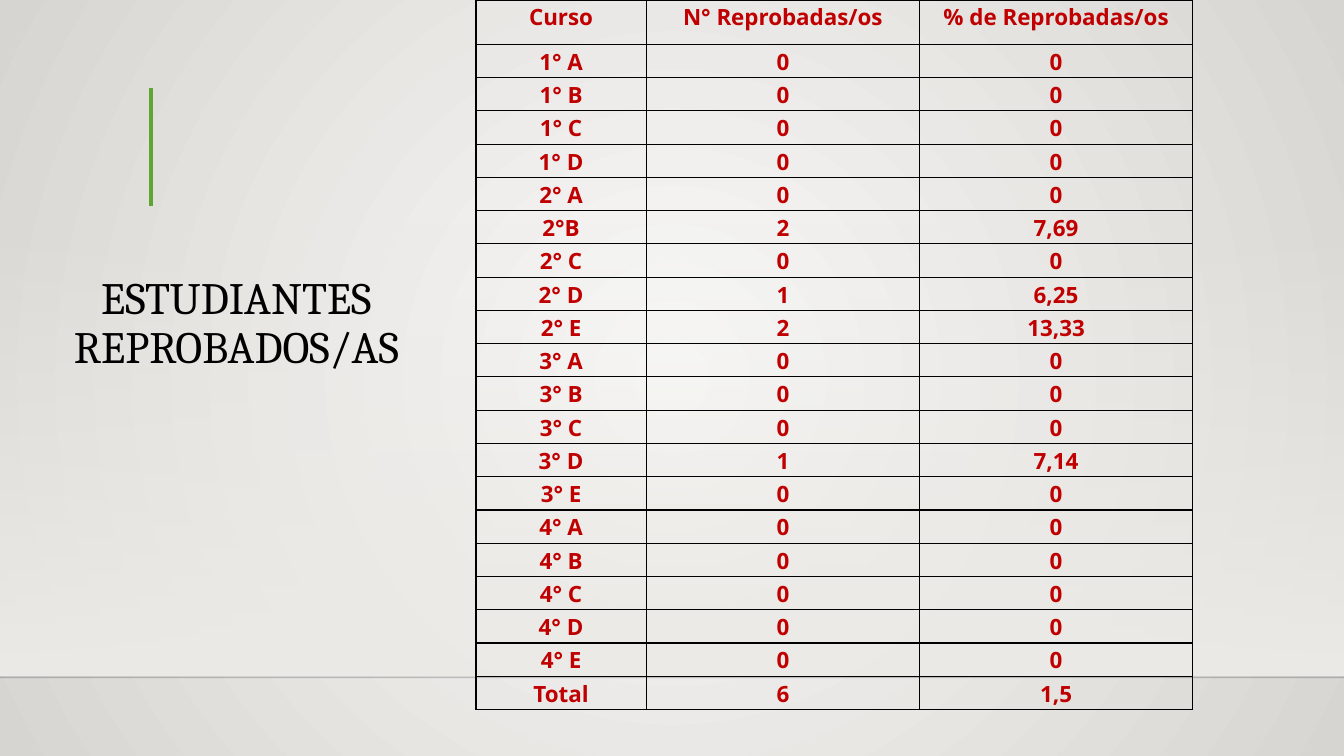
from lxml.etree import SubElement
from pptx import Presentation
from pptx.dml.color import RGBColor
from pptx.enum.shapes import MSO_CONNECTOR, MSO_SHAPE
from pptx.enum.text import MSO_ANCHOR, PP_ALIGN
from pptx.oxml import parse_xml
from pptx.oxml.ns import nsdecls, qn
from pptx.util import Inches, Pt

COLORS = {
    "center": "FAFAF9",
    "edge": "D7D5D2",
    "band": "EDEBE7",
    "floor": "000001",
    "accent": "5FA534",
    "black": "000000",
    "red": "C00000",
}

HEADERS = ("Curso", "N° Reprobadas/os", "% de Reprobadas/os")
COURSES = ("1° A", "1° B", "1° C", "1° D", "2° A", "2°B", "2° C", "2° D", "2° E",
           "3° A", "3° B", "3° C", "3° D", "3° E",
           "4° A", "4° B", "4° C", "4° D", "4° E")
FAILED = {"2°B": ("2", "7,69"), "2° D": ("1", "6,25"),
          "2° E": ("2", "13,33"), "3° D": ("1", "7,14")}
TOTAL = ("Total", "6", "1,5")


def rgb(name):
    return RGBColor.from_string(COLORS[name])


def set_gradient(owner, stops, direction):
    """Replace the solid fill of owner by a gradient of (position, color, alpha) stops."""
    gs = "".join(
        f'<a:gs pos="{pos * 1000}"><a:srgbClr val="{COLORS[color]}">'
        f'<a:alpha val="{alpha * 1000}"/></a:srgbClr></a:gs>'
        for pos, color, alpha in stops)
    solid = owner.find(qn("a:solidFill"))
    owner.replace(solid, parse_xml(
        f'<a:gradFill {nsdecls("a")} rotWithShape="1"><a:gsLst>{gs}</a:gsLst>'
        f'{direction}</a:gradFill>'))


def add_line(s, x1, y1, x2, y2, color, width):
    line = s.shapes.add_connector(MSO_CONNECTOR.STRAIGHT, Inches(x1), Inches(y1),
                                  Inches(x2), Inches(y2))
    line.line.color.rgb = rgb(color)
    line.line.width = Pt(width)
    SubElement(line._element.spPr, qn("a:effectLst"))
    return line


def add_backdrop(s, width):
    fill = s.background.fill
    fill.solid()
    fill.fore_color.rgb = rgb("center")
    set_gradient(s._element.cSld.find(qn("p:bg")).find(qn("p:bgPr")),
                 [(0, "center", 100), (100, "edge", 100)],
                 '<a:path path="circle"><a:fillToRect l="50000" t="50000" '
                 'r="50000" b="50000"/></a:path>')

    band = s.shapes.add_shape(MSO_SHAPE.RECTANGLE, 0, Inches(2.2),
                              Inches(width), Inches(4.5))
    band.shadow.inherit = False
    band.line.fill.background()
    band.fill.solid()
    set_gradient(band._element.spPr, [(0, "band", 0), (100, "band", 100)],
                 '<a:lin ang="5400000" scaled="0"/>')

    floor = add_line(s, 0, 6.72, width, 6.72, "floor", 1)
    floor_color = floor._element.spPr.find(".//" + qn("a:srgbClr"))
    SubElement(floor_color, qn("a:alpha"), val="20000")
    add_line(s, 1.5, 0.87, 1.5, 2.04, "accent", 3)


def add_title(s, x, y, w, h):
    tf = s.shapes.add_textbox(Inches(x), Inches(y), Inches(w), Inches(h)).text_frame
    tf.word_wrap = True
    tf.vertical_anchor = MSO_ANCHOR.BOTTOM
    p = tf.paragraphs[0]
    p.text = "ESTUDIANTES REPROBADOS/AS"
    p.alignment = PP_ALIGN.CENTER
    p.line_spacing = 0.9
    p.font.name = "Cambria"
    p.font.size = Pt(32)
    p.font.color.rgb = rgb("black")


def style_cell(cell, text):
    cell.margin_left = cell.margin_right = Inches(0.07)
    cell.margin_top = cell.margin_bottom = 0
    tc_pr = cell._tc.get_or_add_tcPr()
    for side in ("lnL", "lnR", "lnT", "lnB"):
        tc_pr.append(parse_xml(
            f'<a:{side} {nsdecls("a")} w="{Pt(1)}"><a:solidFill>'
            f'<a:srgbClr val="{COLORS["black"]}"/></a:solidFill></a:{side}>'))
    cell.fill.background()
    p = cell.text_frame.paragraphs[0]
    p.text = text
    p.alignment = PP_ALIGN.CENTER
    p.line_spacing = 1.07
    p.space_after = Pt(8)
    p.font.name = "Open Sans"
    p.font.size = Pt(16)
    p.font.bold = True
    p.font.color.rgb = rgb("red")


def add_results_table(s, x, y, col_widths, header_height, row_height):
    rows = [HEADERS, *((c, *FAILED.get(c, ("0", "0"))) for c in COURSES), TOTAL]
    height = header_height + row_height * (len(rows) - 1)
    table = s.shapes.add_table(len(rows), len(col_widths), Inches(x), Inches(y),
                               Inches(sum(col_widths)), Inches(height)).table
    table.first_row = table.horz_banding = False
    for column, width in zip(table.columns, col_widths):
        column.width = Inches(width)
    for i, (row, values) in enumerate(zip(table.rows, rows)):
        row.height = Inches(row_height if i else header_height)
        for cell, text in zip(row.cells, values):
            style_cell(cell, text)


def main():
    prs = Presentation()
    prs.slide_width, prs.slide_height = Inches(13.33), Inches(7.5)
    s = prs.slides.add_slide(prs.slide_layouts[6])
    add_backdrop(s, 13.33)
    add_title(s, 0.12, 2.15, 4.45, 1.6)
    add_results_table(s, 4.72, 0, (1.69, 2.71, 2.71), 0.44, 0.33)
    prs.save("out.pptx")


if __name__ == "__main__":
    main()
